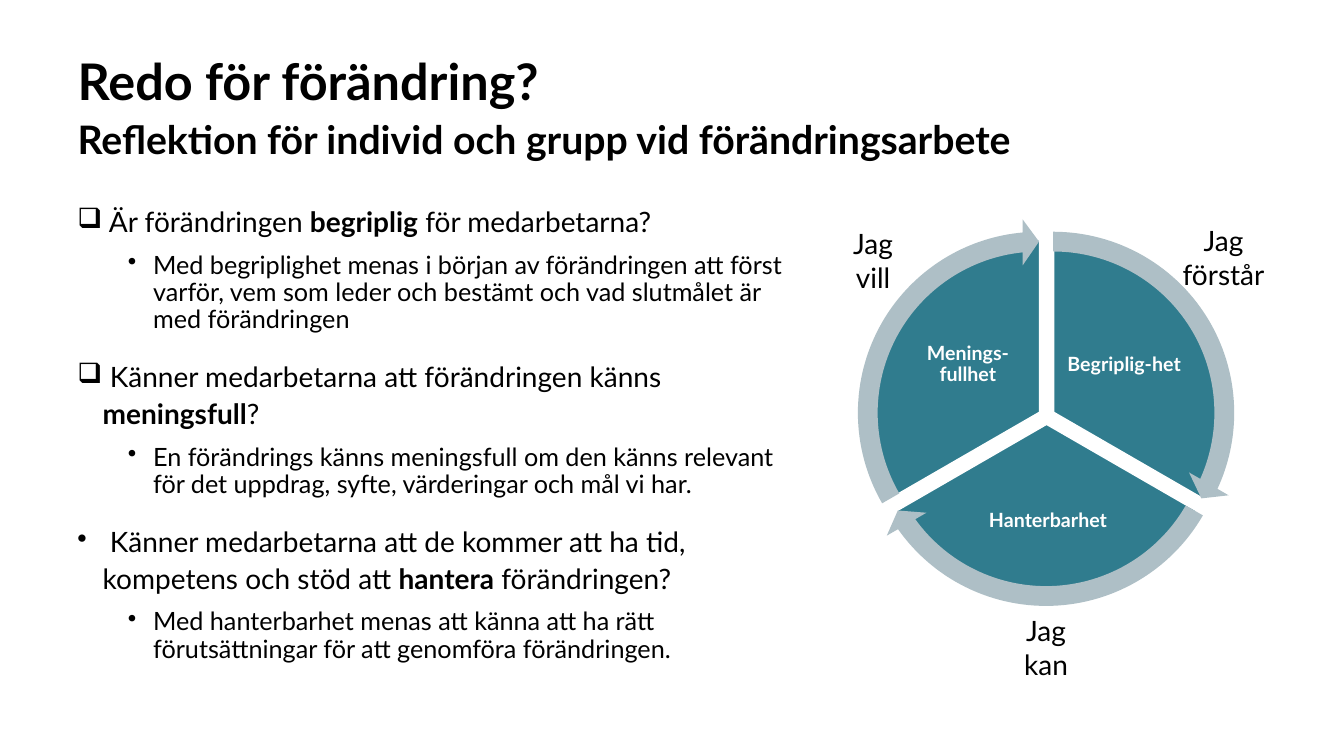
from dataclasses import dataclass

from lxml.etree import SubElement
from pptx import Presentation
from pptx.dml.color import RGBColor
from pptx.enum.shapes import MSO_SHAPE
from pptx.enum.text import MSO_ANCHOR, PP_ALIGN
from pptx.oxml.ns import qn
from pptx.util import Inches, Pt

FONT = "Lato"
COLORS = {"text": "000000", "white": "FFFFFF", "teal": "307C8E", "arrow": "AEBFC6"}


@dataclass
class Point:
    mark: str
    lead: str
    key: str
    tail: str
    detail: str


@dataclass
class Sector:
    name: str
    left: float
    top: float
    angles: tuple[float, float]
    turn: tuple[float, float]
    box: tuple[float, float, float, float]


@dataclass
class Label:
    text: str
    box: tuple[float, float, float, float]


POINTS = [
    Point("❑", " Är förändringen ", "begriplig", " för medarbetarna?",
          "Med begriplighet menas i början av förändringen att först varför, "
          "vem som leder och bestämt och vad slutmålet är med förändringen"),
    Point("❑", " Känner medarbetarna att förändringen känns ", "meningsfull", "?",
          "En förändrings känns meningsfull om den känns relevant för det "
          "uppdrag, syfte, värderingar och mål vi har."),
    Point("•", " Känner medarbetarna att de kommer att ha tid, kompetens och stöd att ",
          "hantera", " förändringen?",
          "Med hanterbarhet menas att känna att ha rätt förutsättningar för "
          "att genomföra förändringen."),
]
# Angles are in units of 100000/60000 degree, so 18 is 30 degrees
SECTORS = [
    Sector("Begriplig-het", 8.74, 2.38, (162, 18), (14.73, 161.99), (10.54, 3.11, 1.22, 1.02)),
    Sector("Hanterbarhet", 8.67, 2.5, (18, 90), (86.72, 18), (9.48, 4.72, 1.83, 0.9)),
    Sector("Menings-fullhet", 8.6, 2.38, (90, 162), (158.73, 90), (8.99, 3.11, 1.22, 1.02)),
]
LABELS = [
    Label("Jag\vvill", (8.33, 2.2, 0.66, 0.77)),
    Label("Jag\vförstår", (11.57, 2.17, 1.13, 0.77)),
    Label("Jag\vkan", (10.02, 6.04, 0.71, 0.77)),
]


def color(name: str) -> RGBColor:
    return RGBColor.from_string(COLORS[name])


def style(para, size: float, tint: str = "text", bold: bool = False) -> None:
    font = para.font
    font.name, font.size, font.bold = FONT, Pt(size), bold
    font.color.rgb = color(tint)


def bullet(para, mark: str, indent: float) -> None:
    props = para._p.get_or_add_pPr()
    props.set("marL", str(Inches(indent)))
    props.set("indent", str(Inches(-0.25)))
    tint = SubElement(props, qn("a:buClr"))
    SubElement(tint, qn("a:srgbClr")).set("val", COLORS["text"])
    SubElement(props, qn("a:buChar")).set("char", mark)


def add_text(slide, box: tuple[float, float, float, float], wrap: bool = True):
    frame = slide.shapes.add_textbox(*map(Inches, box)).text_frame
    frame.word_wrap = wrap
    return frame


def add_title(slide) -> None:
    title = slide.shapes.title
    title.left, title.top = Inches(0.67), Inches(0.39)
    title.width, title.height = Inches(12), Inches(0.8)
    frame = title.text_frame
    frame.vertical_anchor = MSO_ANCHOR.TOP
    para = frame.paragraphs[0]
    para.alignment, para.line_spacing = PP_ALIGN.LEFT, 1.1
    style(para, 36, bold=True)
    head = para.add_run()
    head.text, head.font.size = "Redo för förändring?", Pt(36)
    para.add_line_break()
    sub = para.add_run()
    sub.text = "Reflektion för individ och grupp vid förändringsarbete"
    sub.font.size = Pt(28)


def add_points(slide) -> None:
    frame = add_text(slide, (0.67, 1.95, 7.45, 4.75))
    for i, point in enumerate(POINTS):
        para = frame.add_paragraph() if i else frame.paragraphs[0]
        bullet(para, point.mark, 0.25)
        para.line_spacing, para.space_before = 1.1, Pt(16 if i else 0)
        style(para, 20)
        for text in (point.lead, point.key, point.tail):
            run = para.add_run()
            run.text, run.font.bold = text, text == point.key
        para = frame.add_paragraph()
        para.level = 1
        bullet(para, "•", 0.75)
        para.line_spacing, para.space_before = 0.9, Pt(10)
        style(para, 18)
        para.add_run().text = point.detail


def add_form(slide, kind, left: float, top: float, size: float, fill: str, adjust):
    shape = slide.shapes.add_shape(kind, Inches(left), Inches(top), Inches(size), Inches(size))
    shape.shadow.inherit = False
    shape.fill.solid()
    shape.fill.fore_color.rgb = color(fill)
    for i, value in enumerate(adjust):
        shape.adjustments[i] = value
    return shape


def add_sector(slide, part: Sector) -> None:
    pie = add_form(slide, MSO_SHAPE.PIE, part.left, part.top, 3.42, "teal", part.angles)
    pie.line.color.rgb, pie.line.width = color("white"), Pt(1)
    frame = add_text(slide, part.box)
    frame.vertical_anchor = MSO_ANCHOR.MIDDLE
    frame.margin_left = frame.margin_right = Inches(0.02)
    frame.margin_top = frame.margin_bottom = Inches(0.02)
    para = frame.paragraphs[0]
    para.alignment, para.line_spacing = PP_ALIGN.CENTER, 0.9
    style(para, 14, "white", True)
    para.add_run().text = part.name


def add_arrow(slide, part: Sector) -> None:
    adjust = (0.051, 3.275, *part.turn, 0.059)
    arrow = add_form(slide, MSO_SHAPE.CIRCULAR_ARROW, part.left - 0.22, part.top - 0.21,
                     3.85, "arrow", adjust)
    arrow.line.fill.background()


def add_label(slide, label: Label) -> None:
    para = add_text(slide, label.box, wrap=False).paragraphs[0]
    para.alignment = PP_ALIGN.CENTER
    style(para, 20)
    para.text = label.text


def main() -> None:
    deck = Presentation()
    deck.slide_width, deck.slide_height = Inches(13.33), Inches(7.5)
    slide = deck.slides.add_slide(deck.slide_layouts[5])
    # Heading and questions
    add_title(slide)
    add_points(slide)
    # Wheel: sectors below, arrows on top
    for part in SECTORS:
        add_sector(slide, part)
    for part in SECTORS:
        add_arrow(slide, part)
    # Labels around the wheel
    for label in LABELS:
        add_label(slide, label)
    deck.save("out.pptx")


if __name__ == "__main__":
    main()
